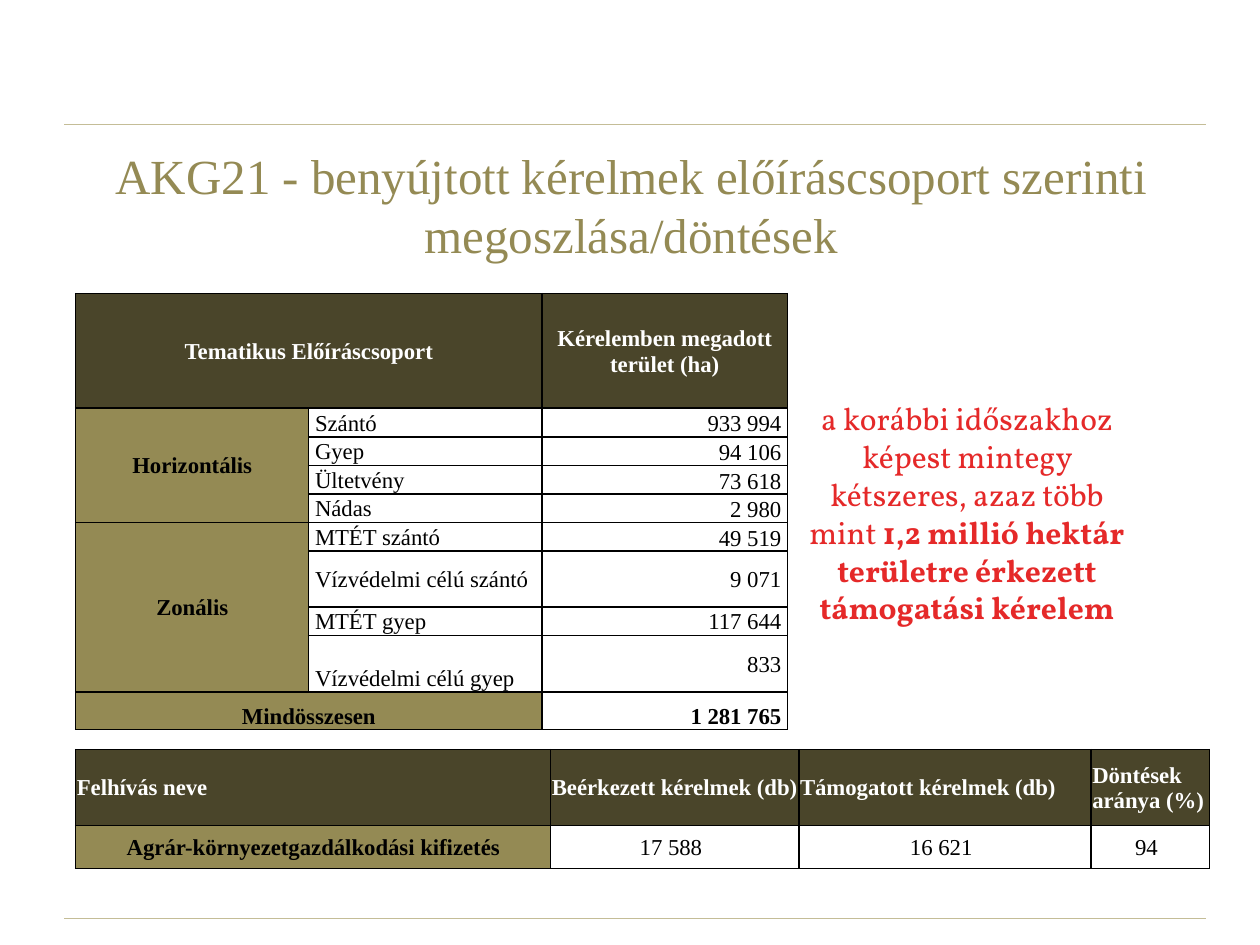
from lxml.etree import SubElement
from pptx import Presentation
from pptx.dml.color import RGBColor
from pptx.enum.shapes import MSO_CONNECTOR
from pptx.enum.text import MSO_ANCHOR, PP_ALIGN
from pptx.oxml.ns import qn
from pptx.util import Inches, Pt

BLACK = RGBColor(0x00, 0x00, 0x00)
WHITE = RGBColor(0xFF, 0xFF, 0xFF)
DARK = RGBColor(0x4A, 0x45, 0x2A)
OLIVE = RGBColor(0x94, 0x8A, 0x54)
SAND = RGBColor(0xC4, 0xBD, 0x97)
RED = RGBColor(0xE5, 0x29, 0x29)
SERIF = "Times New Roman"
LEFT, CENTER, RIGHT = PP_ALIGN.LEFT, PP_ALIGN.CENTER, PP_ALIGN.RIGHT
MIDDLE, BOTTOM = MSO_ANCHOR.MIDDLE, MSO_ANCHOR.BOTTOM
TITLE = "AKG21 - benyújtott kérelmek előíráscsoport szerinti megoszlása/döntések"
GROUPS = {
    "Horizontális": [
        ("Szántó", "933 994"),
        ("Gyep", "94 106"),
        ("Ültetvény", "73 618"),
        ("Nádas", "2 980"),
    ],
    "Zonális": [
        ("MTÉT szántó", "49 519"),
        ("Vízvédelmi célú szántó", "9 071"),
        ("MTÉT gyep", "117 644"),
        ("Vízvédelmi célú gyep", "833"),
    ],
}
DECISIONS = [
    ["Felhívás neve", "Beérkezett kérelmek (db)", "Támogatott kérelmek (db)", "Döntések\naránya (%)"],
    ["Agrár-környezetgazdálkodási kifizetés", "17 588", "16 621", "94"],
]


def grid(*cells):
    """Turn counts of grid cells, 100 across and 75 down, into lengths."""
    return [Inches(count / 10) for count in cells]


def write_text(para, text, size=13, font=SERIF, color=BLACK, bold=False, align=LEFT, spacing=None):
    """Add one formatted span to a paragraph."""
    para.alignment = align
    if spacing:
        para.line_spacing = spacing
    span = para.add_run()
    span.text = text
    span.font.size, span.font.name, span.font.bold = Pt(size), font, bold
    span.font.color.rgb = color


def add_rule(page, left, top, width):
    """Draw a thin horizontal rule."""
    x, y, length = grid(left, top, width)
    rule = page.shapes.add_connector(MSO_CONNECTOR.STRAIGHT, x, y, x + length, y)
    rule.line.color.rgb, rule.line.width = SAND, Pt(0.75)
    SubElement(rule.element.spPr, qn("a:effectLst"))


def add_title(page, box):
    """Fill the title placeholder."""
    title = page.shapes.title
    title.left, title.top, title.width, title.height = grid(*box)
    title.text_frame.word_wrap = True
    title.text_frame.vertical_anchor = MIDDLE
    write_text(title.text_frame.paragraphs[0], TITLE, size=28, color=OLIVE, align=CENTER)


def add_borders(cell):
    """Outline a table cell in black."""
    for side in ("a:lnL", "a:lnR", "a:lnT", "a:lnB"):
        border = SubElement(cell._tc.get_or_add_tcPr(), qn(side), w=str(Pt(1)))
        SubElement(SubElement(border, qn("a:solidFill")), qn("a:srgbClr"), val=str(BLACK))


def fill_cell(cell, text, fill=None, anchor=MIDDLE, **style):
    """Set the text and fill of a table cell."""
    cell.vertical_anchor = anchor
    if fill is None:
        cell.fill.background()
    else:
        cell.fill.solid()
        cell.fill.fore_color.rgb = fill
    for index, line in enumerate(text.split("\n")):
        frame = cell.text_frame
        para = frame.add_paragraph() if index else frame.paragraphs[0]
        write_text(para, line, **style)


def make_table(page, box, columns, rows, margins):
    """Add an outlined table without a banded style."""
    table = page.shapes.add_table(len(rows), len(columns), *grid(*box)).table
    table.first_row = table.horz_banding = False
    for column, width in zip(table.columns, grid(*columns)):
        column.width = width
    for row, height in zip(table.rows, grid(*rows)):
        row.height = height
    for cell in table.iter_cells():
        cell.margin_left, cell.margin_top, cell.margin_right, cell.margin_bottom = grid(*margins)
        add_borders(cell)
    return table


def add_area_table(page, box):
    """Show the requested area for each group of rules."""
    rows = [9.1] + [2.27] * 5 + [4.45, 2.27, 4.45, 3]
    table = make_table(page, box, [18.5, 18.5, 19.5], rows, (0.5, 0, 0.5, 0))
    last = len(rows) - 1
    head = dict(fill=DARK, color=WHITE, bold=True, align=CENTER, spacing=1.07)
    side = dict(fill=OLIVE, bold=True, align=CENTER, spacing=1.07)
    for row in (0, last):
        table.cell(row, 0).merge(table.cell(row, 1))
    fill_cell(table.cell(0, 0), "Tematikus Előíráscsoport", **head)
    fill_cell(table.cell(0, 2), "Kérelemben megadott terület (ha)", **head)
    row = 1
    for group, items in GROUPS.items():
        table.cell(row, 0).merge(table.cell(row + len(items) - 1, 0))
        fill_cell(table.cell(row, 0), group, **side)
        for name, area in items:
            name_anchor = BOTTOM if row == last - 1 else MIDDLE
            area_anchor = BOTTOM if row < 6 else MIDDLE
            fill_cell(table.cell(row, 1), name, anchor=name_anchor, spacing=1.07)
            fill_cell(table.cell(row, 2), area, anchor=area_anchor, align=RIGHT, spacing=1.07)
            row += 1
    fill_cell(table.cell(last, 0), "Mindösszesen", anchor=BOTTOM, **side)
    fill_cell(table.cell(last, 2), "1 281 765", anchor=BOTTOM, bold=True, align=RIGHT, spacing=1.07)


def add_decision_table(page, box):
    """Show the requests received and supported."""
    table = make_table(page, box, [37.7, 19.7, 23.2, 9.4], [6, 3.45], (0.1, 0.1, 0.1, 0))
    for column, (heading, value) in enumerate(zip(*DECISIONS)):
        fill_cell(table.cell(0, column), heading, fill=DARK, color=WHITE, bold=True)
        cell = table.cell(1, column)
        if column:
            fill_cell(cell, value, align=CENTER)
            cell.margin_right = grid(0.7)[0]
        else:
            fill_cell(cell, value, fill=OLIVE, bold=True, align=CENTER)


def add_callout(page, box):
    """Place the red remark beside the area table."""
    frame = page.shapes.add_textbox(*grid(*box)).text_frame
    frame.word_wrap = True
    style = dict(size=18, font="Vollkorn", color=RED, align=CENTER)
    para = frame.paragraphs[0]
    write_text(para, "a korábbi időszakhoz képest mintegy kétszeres, azaz több mint ", **style)
    write_text(para, "1,2 millió hektár területre érkezett támogatási kérelem", bold=True, **style)


def main():
    """Build and save the deck."""
    deck = Presentation()
    deck.slide_width, deck.slide_height = grid(100, 75)
    page = deck.slides.add_slide(deck.slide_layouts[5])
    for top in (72.9, 9.9):
        add_rule(page, 5.1, top, 90.6)
    add_title(page, (5.1, 10.7, 90, 11))
    add_area_table(page, (6, 23.3, 56.5, 34.6))
    add_decision_table(page, (6, 59.5, 90, 9.4))
    add_callout(page, (62.6, 31.2, 28.3, 19.2))
    deck.save("out.pptx")


if __name__ == "__main__":
    main()
